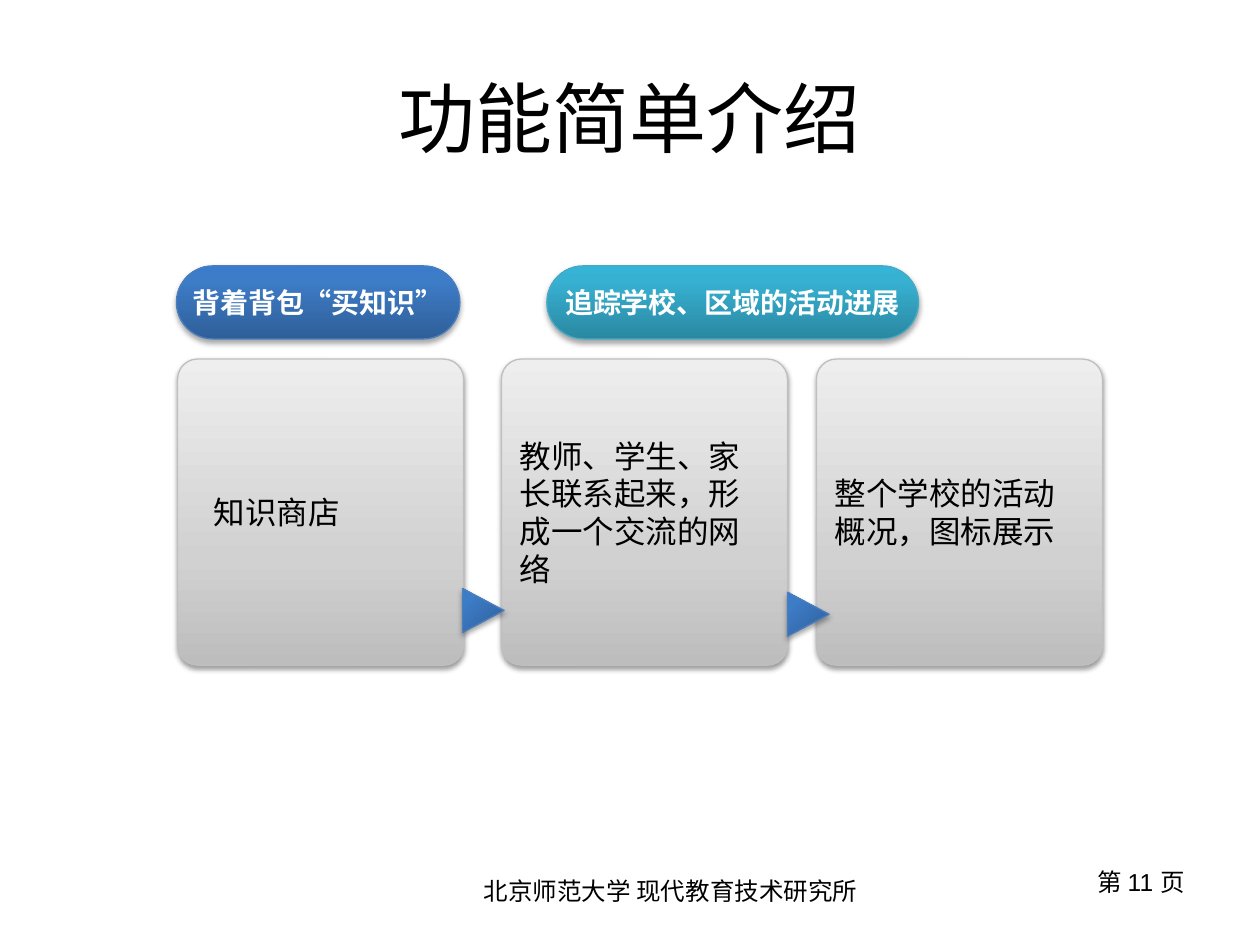
from lxml import etree
from pptx import Presentation
from pptx.dml.color import RGBColor
from pptx.enum.shapes import MSO_SHAPE
from pptx.enum.text import MSO_ANCHOR, PP_ALIGN
from pptx.oxml import parse_xml
from pptx.oxml.ns import nsdecls, qn
from pptx.util import Inches, Pt

ROUND, TRIANGLE = MSO_SHAPE.ROUNDED_RECTANGLE, MSO_SHAPE.FLOWCHART_EXTRACT
LEFT, CENTER, RIGHT = PP_ALIGN.LEFT, PP_ALIGN.CENTER, PP_ALIGN.RIGHT
TOP, MIDDLE = MSO_ANCHOR.TOP, MSO_ANCHOR.MIDDLE
BLACK, WHITE = RGBColor(0, 0, 0), RGBColor(255, 255, 255)
CJK = "Noto Sans CJK SC"

BLUE = dict(stops=[(0, "2F5F99"), (80, "3D7CC7"), (100, "3A7CCB")],
            line=RGBColor(0x4B, 0x7E, 0xBC), shadow=(35, 1.8))
TEAL = dict(stops=[(0, "2A88A2"), (80, "37B1D2"), (100, "34B4D6")],
            line=RGBColor(0x46, 0xAA, 0xC5), shadow=(35, 1.8))
GREY = dict(stops=[(0, "BDBDBD"), (35, "D1D1D1"), (100, "EEEEEE")],
            line=RGBColor(0xBF, 0xBF, 0xBF), shadow=(38, 1.6))

LABELS = [
    ("北京师范大学 现代教育技术研究所", (3.74, 6.9, 4.41, 0.64), CJK, 14, LEFT, TOP),
    ("功能简单介绍", (0.5, 0.3, 9, 1.25), "Arial", 44, CENTER, MIDDLE),
    ("第 11 页", (7.17, 6.83, 2.33, 0.52), "Arial", 14, RIGHT, TOP),
]
PILL_TOP, PILL_H = 2.11, 0.58
PILLS = [
    ("背着背包“买知识”", 1.4, 2.25, BLUE),
    ("追踪学校、区域的活动进展", 4.34, 2.95, TEAL),
]
CARD_TOP, CARD_W, CARD_H = 2.85, 2.27, 2.43
CARDS = [
    ("知识商店", 1.41, 0.14),
    ("教师、学生、家长联系起来，形成一个交流的网络", 3.98, 0),
    ("整个学校的活动概况，图标展示", 6.48, 0),
]
ARROWS = [(3.66, 4.68), (6.24, 4.71)]
ARROW_W, ARROW_H = 0.35, 0.33


def write(s, text, font, size, color, align, anchor, wrap=True, bold=False, indent=0):
    tf = s.text_frame
    tf.word_wrap = wrap
    tf.vertical_anchor = anchor
    p = tf.paragraphs[0]
    p.text = text
    p.alignment = align
    if indent:
        p._p.get_or_add_pPr().set("marL", str(Inches(indent)))
    f = p.font
    f.name, f.size, f.bold = font, Pt(size), bold
    f.color.rgb = color
    ea = etree.SubElement(f._element, qn("a:ea"))
    ea.set("typeface", CJK)


def add_block(slide, kind, box, style, angle=270):
    s = slide.shapes.add_shape(kind, *map(Inches, box))
    s.line.color.rgb = style["line"]
    s.line.width = Pt(0.75)
    stops = "".join(f'<a:gs pos="{pos * 1000}"><a:srgbClr val="{c}"/></a:gs>'
                    for pos, c in style["stops"])
    ln = s._element.spPr.find(qn("a:ln"))
    ln.addprevious(parse_xml(
        f'<a:gradFill {nsdecls("a")} rotWithShape="1"><a:gsLst>{stops}</a:gsLst>'
        f'<a:lin ang="{angle * 60000}" scaled="0"/></a:gradFill>'))
    alpha, dist = style["shadow"]
    ln.addnext(parse_xml(
        f'<a:effectLst {nsdecls("a")}><a:outerShdw blurRad="{Pt(3.1)}" dist="{Pt(dist)}" '
        f'dir="5400000" rotWithShape="0"><a:srgbClr val="000000">'
        f'<a:alpha val="{alpha * 1000}"/></a:srgbClr></a:outerShdw></a:effectLst>'))
    return s


prs = Presentation()
prs.slide_width, prs.slide_height = Inches(10), Inches(7.5)
slide = prs.slides.add_slide(prs.slide_layouts[6])

for text, box, font, size, align, anchor in LABELS:
    s = slide.shapes.add_textbox(*map(Inches, box))
    write(s, text, font, size, BLACK, align, anchor)

for text, left, width, style in PILLS:
    s = add_block(slide, ROUND, (left, PILL_TOP, width, PILL_H), style)
    s.adjustments[0] = 0.5
    write(s, text, "Calibri", 16, WHITE, CENTER, MIDDLE, wrap=False, bold=True)

for text, left, indent in CARDS:
    s = add_block(slide, ROUND, (left, CARD_TOP, CARD_W, CARD_H), GREY)
    s.adjustments[0] = 0.07
    write(s, text, "Arial", 18, BLACK, LEFT, MIDDLE, indent=indent)

for left, top in ARROWS:
    s = add_block(slide, TRIANGLE, (left, top, ARROW_W, ARROW_H), BLUE, angle=135)
    s.rotation = 90

prs.save("out.pptx")
